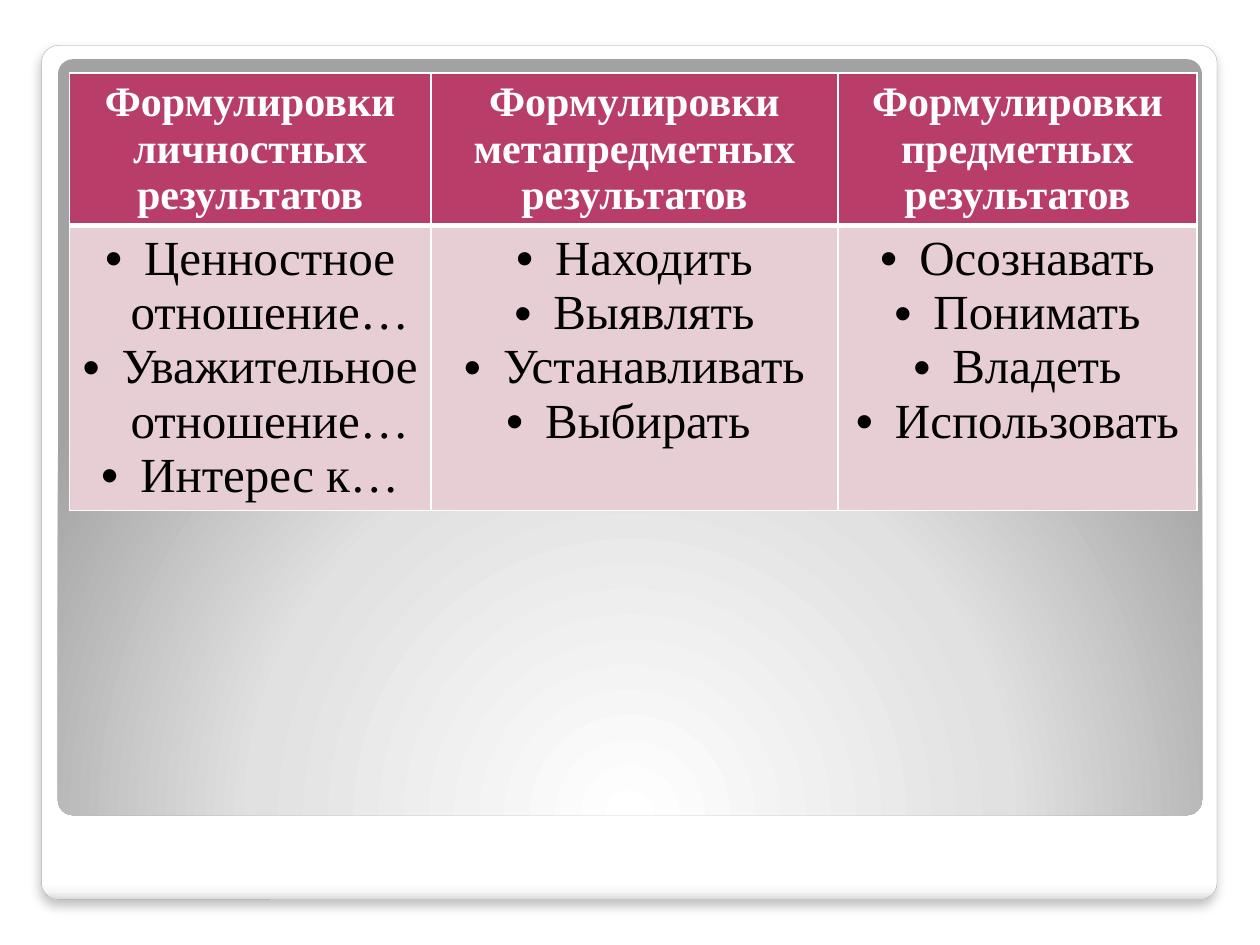
from pptx import Presentation
from pptx.dml.color import RGBColor
from pptx.enum.shapes import MSO_SHAPE
from pptx.enum.text import PP_ALIGN
from pptx.oxml import parse_xml
from pptx.oxml.ns import nsdecls
from pptx.util import Inches, Pt

FONT = "Times New Roman"
WHITE, BLACK = "FFFFFF", "000000"
HEADER_FILL, BODY_FILL = "B83D68", "E6CED4"

COLUMNS = [
    (2.87, "Формулировки личностных результатов",
     ["Ценностное отношение…", "Уважительное отношение…", "Интерес к…"]),
    (3.23, "Формулировки метапредметных результатов",
     ["Находить", "Выявлять", "Устанавливать", "Выбирать "]),
    (2.85, "Формулировки предметных результатов",
     ["Осознавать", "Понимать", "Владеть", "Использовать "]),
]
ROW_HEIGHTS = [1.21, 2.26]


def color(value):
    return RGBColor.from_string(value)


def element(xml):
    """Parse one DrawingML element, adding its namespace."""
    tag, rest = xml.split(" ", 1)
    return parse_xml(f"{tag} {nsdecls('a')} {rest}")


def add_panel(page, left, top, width, height, stops, direction):
    """Add a rounded panel with a gradient fill and no line."""
    panel = page.shapes.add_shape(MSO_SHAPE.ROUNDED_RECTANGLE, Inches(left),
                                  Inches(top), Inches(width), Inches(height))
    panel.adjustments[0] = 0.02
    panel.shadow.inherit = False
    panel.line.fill.background()
    stop_xml = "".join(
        f'<a:gs pos="{place * 1000}"><a:srgbClr val="{value}"/></a:gs>'
        for place, value in stops)
    panel.element.spPr.insert(2, element(
        f'<a:gradFill rotWithShape="1"><a:gsLst>{stop_xml}</a:gsLst>'
        f'{direction}</a:gradFill>'))
    return panel


def add_shadow(shape):
    """Add a soft shadow below a shape."""
    effects = shape.element.spPr.find(
        "{http://schemas.openxmlformats.org/drawingml/2006/main}effectLst")
    effects.append(element(
        f'<a:outerShdw blurRad="{Pt(6)}" dist="{Pt(4)}" dir="5400000" '
        'algn="t" rotWithShape="0"><a:srgbClr val="000000">'
        '<a:alpha val="25000"/></a:srgbClr></a:outerShdw>'))


def style_cell(cell, fill, bottom_width):
    """Set white borders, then the fill."""
    properties = cell._tc.get_or_add_tcPr()
    for side in "LRTB":
        width = Pt(bottom_width if side == "B" else 1)
        properties.append(element(
            f'<a:ln{side} w="{width}"><a:solidFill><a:srgbClr val="{WHITE}"/>'
            f'</a:solidFill></a:ln{side}>'))
    cell.fill.solid()
    cell.fill.fore_color.rgb = color(fill)


def add_bullet(para):
    properties = para._p.get_or_add_pPr()
    properties.set("marL", str(Inches(0.31)))
    properties.set("indent", str(-Inches(0.31)))
    properties.append(element('<a:buFont typeface="Arial"/>'))
    properties.append(element('<a:buChar char="•"/>'))


def write_cell(cell, lines, size, text_color, bold=False, bullets=False):
    frame = cell.text_frame
    for index, line in enumerate(lines):
        para = frame.add_paragraph() if index else frame.paragraphs[0]
        para.alignment = PP_ALIGN.CENTER
        if bullets:
            add_bullet(para)
        span = para.add_run()
        span.text = line
        span.font.name = FONT
        span.font.size = Pt(size)
        span.font.bold = bold
        span.font.color.rgb = color(text_color)


def add_results_table(page):
    total_width = sum(width for width, _, _ in COLUMNS)
    table = page.shapes.add_table(
        len(ROW_HEIGHTS), len(COLUMNS), Inches(0.55), Inches(0.58),
        Inches(total_width), Inches(sum(ROW_HEIGHTS))).table
    for row, height in zip(table.rows, ROW_HEIGHTS):
        row.height = Inches(height)
    for index, (width, heading, results) in enumerate(COLUMNS):
        table.columns[index].width = Inches(width)
        header, body = table.cell(0, index), table.cell(1, index)
        style_cell(header, HEADER_FILL, bottom_width=3)
        write_cell(header, [heading], 24, WHITE, bold=True)
        style_cell(body, BODY_FILL, bottom_width=1)
        write_cell(body, results, 28, BLACK, bullets=True)


def main():
    deck = Presentation()
    deck.slide_width, deck.slide_height = Inches(10), Inches(7.5)
    page = deck.slides.add_slide(deck.slide_layouts[6])

    # Outer card
    card = add_panel(page, 0.33, 0.36, 9.33, 6.78,
                     [(0, WHITE), (98, WHITE), (99, "F7F7F7"), (100, "DADADA")],
                     '<a:lin ang="5400000" scaled="0"/>')
    card.line.color.rgb = color("A4A4A4")
    card.line.width = Pt(0.16)
    add_shadow(card)

    # Inner panel, lit from below
    add_panel(page, 0.46, 0.47, 9.08, 6,
              [(0, WHITE), (55, "E1E1E1"), (100, "A2A2A2")],
              '<a:path path="circle"><a:fillToRect l="50000" t="175000" '
              'r="50000" b="-75000"/></a:path>')

    # Table of learning results
    add_results_table(page)
    deck.save("out.pptx")


if __name__ == "__main__":
    main()
